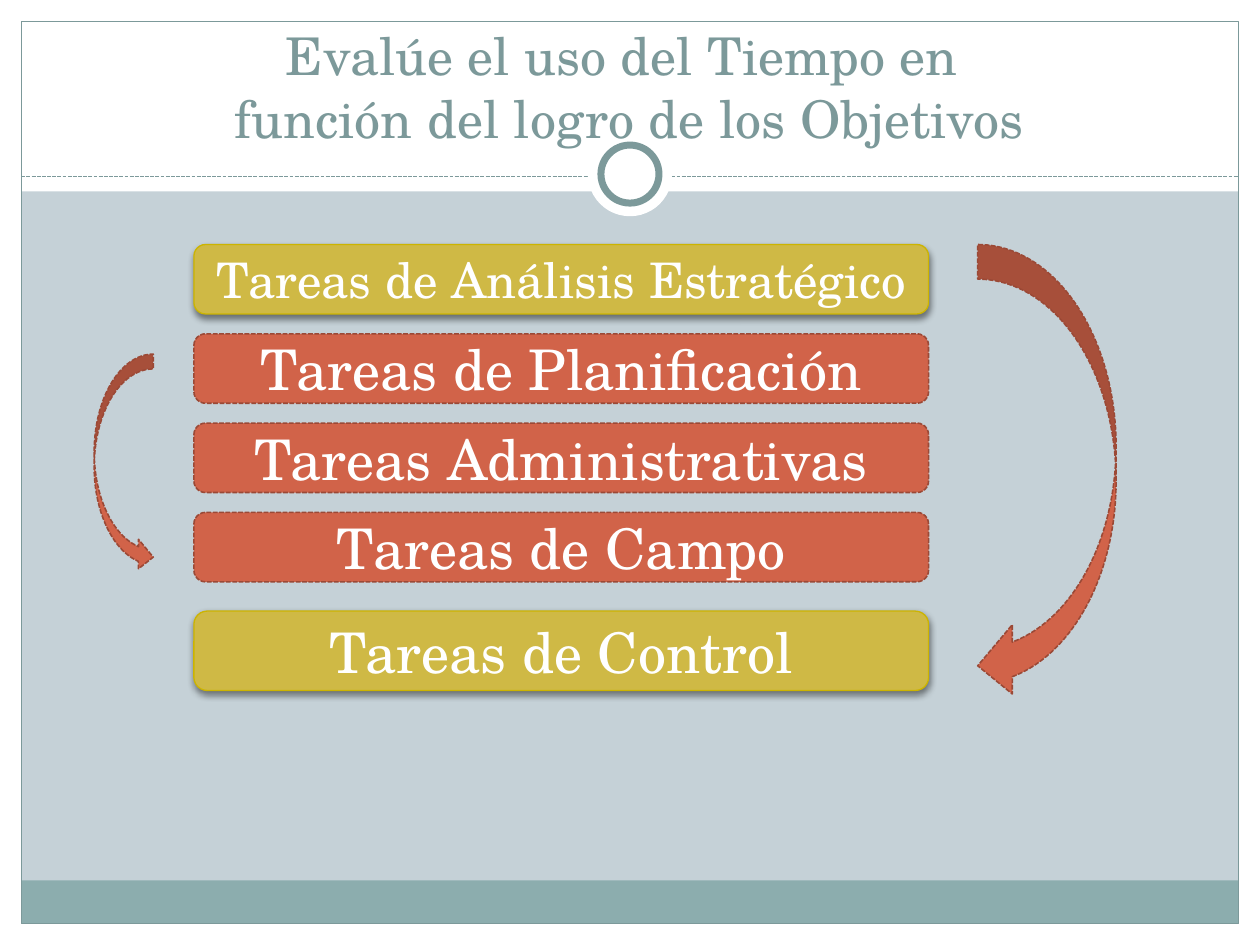
from lxml import etree
from pptx import Presentation
from pptx.dml.color import RGBColor
from pptx.enum.dml import MSO_LINE
from pptx.enum.shapes import MSO_CONNECTOR, MSO_SHAPE
from pptx.enum.text import MSO_ANCHOR, MSO_AUTO_SIZE, PP_ALIGN
from pptx.oxml.ns import qn
from pptx.util import Cm, Pt

RECT = MSO_SHAPE.RECTANGLE
ROUNDED = MSO_SHAPE.ROUNDED_RECTANGLE
OVAL = MSO_SHAPE.OVAL
LEFT_ARROW = MSO_SHAPE.CURVED_LEFT_ARROW
RIGHT_ARROW = MSO_SHAPE.CURVED_RIGHT_ARROW
STRAIGHT = MSO_CONNECTOR.STRAIGHT
DASHED = MSO_LINE.SQUARE_DOT
CENTER = PP_ALIGN.CENTER
MIDDLE = MSO_ANCHOR.MIDDLE
BOTTOM = MSO_ANCHOR.BOTTOM
NO_AUTOSIZE = MSO_AUTO_SIZE.NONE

WHITE = RGBColor(0xFF, 0xFF, 0xFF)
PALE_BLUE = RGBColor(0xC5, 0xD1, 0xD7)
TEAL = RGBColor(0x8C, 0xAD, 0xAE)
DARK_TEAL = RGBColor(0x7C, 0x99, 0x9A)
GOLD = RGBColor(0xCF, 0xB9, 0x45)
GOLD_EDGE = RGBColor(0xCC, 0xB4, 0x00)
RED = RGBColor(0xD1, 0x63, 0x49)
RED_EDGE = RGBColor(0x9B, 0x49, 0x36)

FONT = "TeX Gyre Schola"
WIDTH, HEIGHT = 25.4, 19.05
MARGIN = 0.43
HEADER_HEIGHT = 3.86
DIVIDER_TOP = 3.56
TASK_LEFT, TASK_TOP, TASK_WIDTH, TASK_PITCH = 3.91, 4.93, 14.81, 1.8

GOLD_STYLE = {"fill": GOLD, "edge": GOLD_EDGE, "weight": 0.75}
RED_STYLE = {"fill": RED, "edge": RED_EDGE, "weight": 0.9, "dash": DASHED}

TASKS = [
    ("Tareas de Análisis Estratégico", 28, TASK_TOP, 1.4, GOLD_STYLE),
    ("Tareas de Planificación", 32, TASK_TOP + TASK_PITCH, 1.4, RED_STYLE),
    ("Tareas Administrativas", 32, TASK_TOP + 2 * TASK_PITCH, 1.4, RED_STYLE),
    ("Tareas de Campo", 32, TASK_TOP + 3 * TASK_PITCH, 1.4, RED_STYLE),
    ("Tareas de Control", 32, 12.32, 1.6, GOLD_STYLE),
]


def apply_format(target, values):
    for name, value in values.items():
        setattr(target, name, value)


def format_line(line, color, weight, dash=None):
    line.color.rgb = color
    apply_format(line, {"width": Pt(weight), "dash_style": dash})


def add_figure(slide, kind, box, fill=None, edge=None, weight=0.75, dash=None):
    figure = slide.shapes.add_shape(kind, *map(Cm, box))
    figure.shadow.inherit = False
    if fill is None:
        figure.fill.background()
    else:
        figure.fill.solid()
        figure.fill.fore_color.rgb = fill
    if edge is None:
        figure.line.fill.background()
    else:
        format_line(figure.line, edge, weight, dash)
    return figure


def write_text(holder, text, size, color, anchor):
    frame = holder.text_frame
    frame.text = text
    apply_format(frame, {"word_wrap": True, "auto_size": NO_AUTOSIZE,
                         "vertical_anchor": anchor})
    paragraph = frame.paragraphs[0]
    paragraph.alignment = CENTER
    for run in paragraph.runs:
        apply_format(run.font, {"name": FONT, "size": Pt(size)})
        run.font.color.rgb = color


def add_soft_shadow(figure):
    effects = figure.element.spPr.find(qn("a:effectLst"))
    shadow = etree.SubElement(effects, qn("a:outerShdw"), blurRad=str(Pt(4)),
                              dist=str(Pt(2)), dir="5400000", rotWithShape="0")
    color = etree.SubElement(shadow, qn("a:srgbClr"), val="000000")
    etree.SubElement(color, qn("a:alpha"), val="45000")


def add_divider(slide):
    divider = slide.shapes.add_connector(
        STRAIGHT, Cm(MARGIN), Cm(DIVIDER_TOP), Cm(WIDTH - MARGIN), Cm(DIVIDER_TOP))
    format_line(divider.line, DARK_TEAL, 0.75, DASHED)
    etree.SubElement(divider.element.spPr, qn("a:effectLst"))


def add_ring(slide, diameter, **style):
    box = ((WIDTH - diameter) / 2, 3.51 - diameter / 2, diameter, diameter)
    add_figure(slide, OVAL, box, fill=WHITE, **style)


def add_border(slide):
    inner_width, inner_height = WIDTH - 2 * MARGIN, HEIGHT - 2 * MARGIN
    for band in [
        (0, HEIGHT - MARGIN, WIDTH, MARGIN),
        (0, 0, WIDTH, HEADER_HEIGHT),
        (0, 0, MARGIN, HEIGHT),
        (WIDTH - MARGIN, 0, MARGIN, HEIGHT),
    ]:
        add_figure(slide, RECT, band, fill=WHITE)
    add_figure(slide, RECT, (MARGIN, 17.75, inner_width, 0.87), fill=TEAL)
    add_figure(slide, RECT, (MARGIN, MARGIN, inner_width, inner_height), edge=DARK_TEAL)
    add_divider(slide)
    add_ring(slide, 1.7)
    add_ring(slide, 1.17, edge=DARK_TEAL, weight=4)


def place_title(slide, text):
    title = slide.shapes.title
    apply_format(title, {"left": Cm(0.84), "top": Cm(0.91),
                         "width": Cm(23.7), "height": Cm(2.21)})
    write_text(title, text, 29.7, DARK_TEAL, BOTTOM)
    title.element.getparent().append(title.element)


def add_task(slide, text, size, top, height, style):
    task = add_figure(slide, ROUNDED, (TASK_LEFT, top, TASK_WIDTH, height), **style)
    write_text(task, text, size, WHITE, MIDDLE)
    if style is GOLD_STYLE:
        add_soft_shadow(task)


def main():
    deck = Presentation()
    apply_format(deck, {"slide_width": Cm(WIDTH), "slide_height": Cm(HEIGHT)})
    slide = deck.slides.add_slide(deck.slide_layouts[5])
    slide.background.fill.solid()
    slide.background.fill.fore_color.rgb = PALE_BLUE
    add_border(slide)
    place_title(slide, "Evalúe el uso del Tiempo en \vfunción del logro de los Objetivos")
    for task in TASKS:
        add_task(slide, *task)
    add_figure(slide, LEFT_ARROW, (19.71, TASK_TOP, 2.79, 9.19), **RED_STYLE)
    add_figure(slide, RIGHT_ARROW, (1.9, 7.14, 1.19, 4.39), **RED_STYLE)
    deck.save("out.pptx")


if __name__ == "__main__":
    main()
